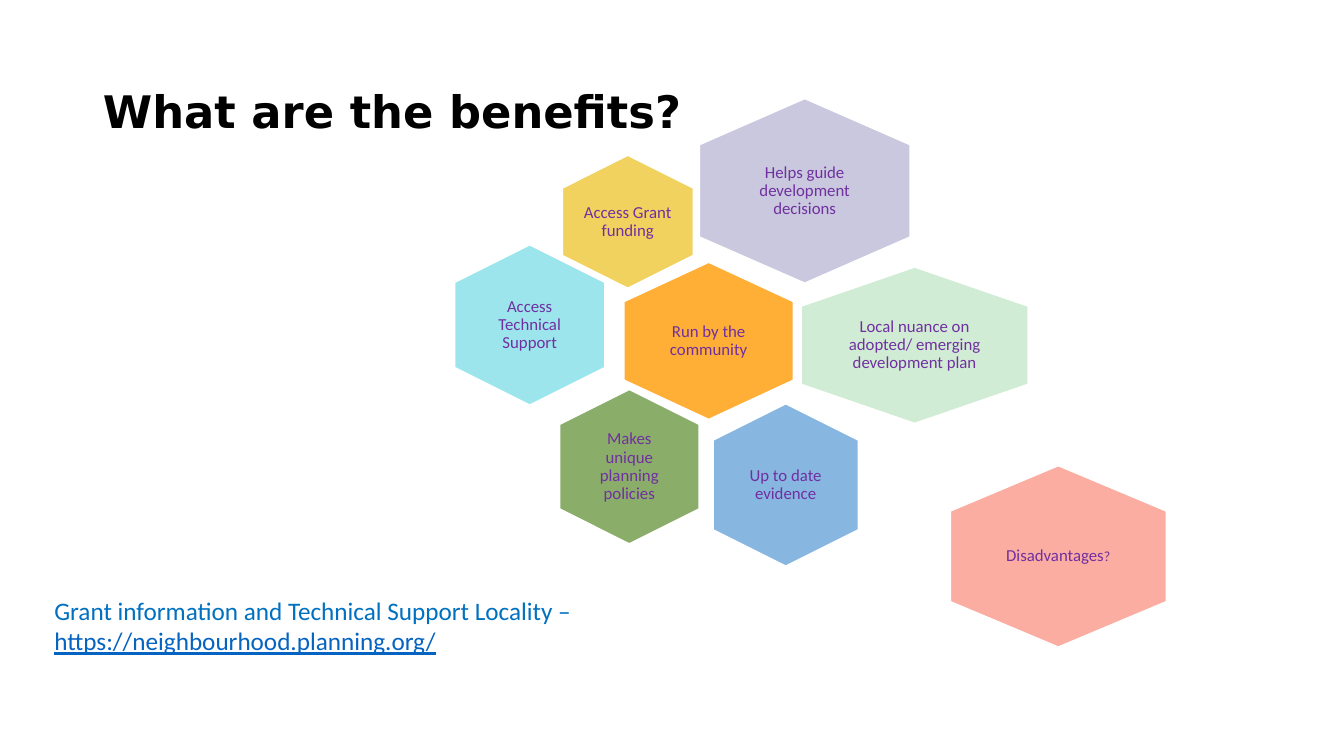
from lxml import etree
from pptx import Presentation
from pptx.dml.color import RGBColor
from pptx.enum.shapes import MSO_SHAPE as SHAPE
from pptx.enum.text import MSO_ANCHOR as ANCHOR, MSO_AUTO_SIZE as FIT, PP_ALIGN as ALIGN
from pptx.oxml.ns import qn
from pptx.util import Cm, Pt

COLORS = {
    "title": "000000", "label": "7030A0", "edge": "FFFFFF",
    "note": "0070C0", "link": "0563C1",
    "lilac": "C4C3DB", "gold": "EFCA41", "orange": "FF9900", "blue": "5B9BD5",
    "mint": "BBE3BF", "green": "40790D", "aqua": "51D1DF", "coral": "F75D43",
}

# Fill, centre x and y, hexagon height and width, label width and height, inset, text runs
CELLS = [
    ("lilac", 20.28, 4.81, 4.65, 5.31, 3.56, 3.1, 0.13, [("Helps guide development decisions", 12)]),
    ("gold", 15.82, 5.59, 3.35, 3.3, 2.21, 2.24, 0, [("Access Grant funding", 12)]),
    ("orange", 17.86, 8.59, 3.96, 4.27, 2.84, 2.64, 0.13, [("Run by the community", 12)]),
    ("blue", 19.8, 12.22, 4.09, 3.66, 2.51, 2.79, 0, [("Up to date evidence", 12)]),
    ("mint", 23.05, 8.7, 3.94, 5.72, 3.81, 2.64, 0.13,
     [("Local nuance on adopted/ emerging development plan", 12)]),
    ("green", 15.86, 11.76, 3.89, 3.51, 2.39, 2.67, 0, [("Makes unique planning policies", 12)]),
    ("aqua", 13.35, 8.19, 4.04, 3.78, 2.57, 2.74, 0.13, [("Access Technical Support", 12)]),
    ("coral", 26.67, 14.02, 4.57, 5.44, 3.61, 3.05, 0, [("Disadvantages", 12), ("?", 10)]),
]


def add_run(para, text, size, color, face="Calibri"):
    run = para.add_run()
    run.text = text
    run.font.name = face
    run.font.size = Pt(size)
    run.font.color.rgb = RGBColor.from_string(COLORS[color])
    return run


def centred(x, y, wide, high):
    """Return left, top, width and height of a box centred on x, y (in cm)."""
    return Cm(x - wide / 2), Cm(y - high / 2), Cm(wide), Cm(high)


deck = Presentation()
deck.slide_width, deck.slide_height = Cm(33.87), Cm(19.05)
slide = deck.slides.add_slide(deck.slide_layouts[5])
shapes = slide.shapes

# Title
title = shapes.title
title.left, title.top, title.width, title.height = Cm(2.34), Cm(1.02), Cm(18.69), Cm(3.68)
frame = title.text_frame
frame.auto_size = FIT.NONE
frame.vertical_anchor = ANCHOR.MIDDLE
para = frame.paragraphs[0]
para.alignment = ALIGN.LEFT
para.line_spacing = 0.9
add_run(para, "What are the benefits?", 32, "title", "DejaVu Sans").font.bold = True

# Honeycomb: the fills fade evenly from 90% to 50% opacity
fade = 40 / (len(CELLS) - 1)
for i, (color, x, y, tall, broad, wide, high, inset, runs) in enumerate(CELLS):
    cell = shapes.add_shape(SHAPE.HEXAGON, *centred(x, y, tall, broad))
    cell.rotation = 90
    cell.shadow.inherit = False
    cell.fill.solid()
    cell.fill.fore_color.rgb = RGBColor.from_string(COLORS[color])
    shade = cell.fill._xPr.find(qn("a:solidFill"))[0]
    etree.SubElement(shade, qn("a:alpha"), val=str(round((90 - i * fade) * 1000)))
    cell.line.color.rgb = RGBColor.from_string(COLORS["edge"])
    cell.line.width = Pt(1)

    frame = shapes.add_textbox(*centred(x, y, wide, high)).text_frame
    frame.word_wrap = True
    frame.vertical_anchor = ANCHOR.MIDDLE
    frame.margin_left = frame.margin_right = Cm(inset)
    frame.margin_top = frame.margin_bottom = Cm(inset)
    para = frame.paragraphs[0]
    para.alignment = ALIGN.CENTER
    para.line_spacing = 0.9
    for text, size in runs:
        add_run(para, text, size, "label")

# Where to find support
frame = shapes.add_textbox(Cm(1.12), Cm(14.88), Cm(13.89), Cm(1.8)).text_frame
frame.word_wrap = True
frame.auto_size = FIT.SHAPE_TO_FIT_TEXT
para = frame.paragraphs[0]
add_run(para, "Grant information and Technical Support Locality – ", 18, "note")
add_run(para, "https://neighbourhood.planning.org/", 18, "link").font.underline = True

deck.save("out.pptx")
